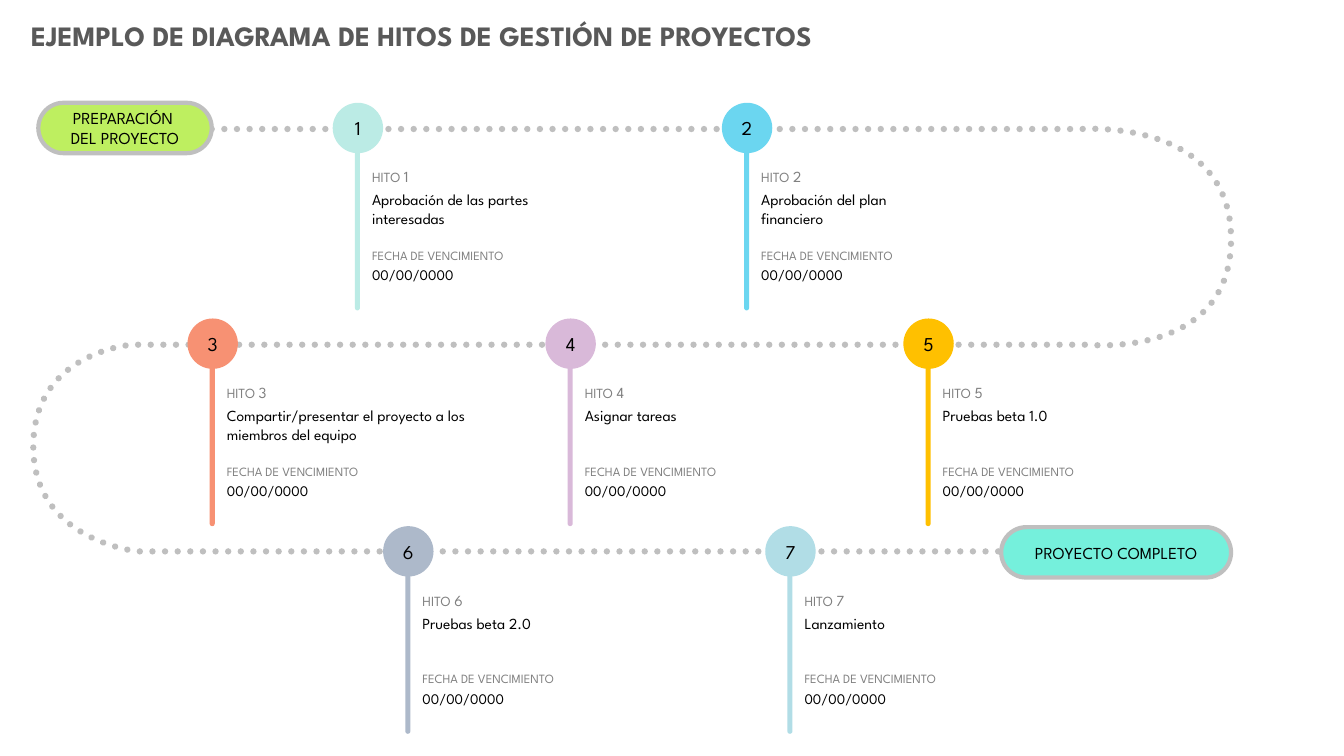
"""Build a one-slide project milestone diagram."""
from dataclasses import dataclass

from lxml import etree
from pptx import Presentation
from pptx import util as u
from pptx.dml.color import RGBColor
from pptx.enum import dml, shapes, text
from pptx.oxml.ns import qn

PX = 9144


@dataclass(frozen=True)
class Theme:
    """Colours and type sizes of the slide."""
    font: str = "League Spartan"
    heading: str = "595959"
    ink: str = "000000"
    muted: str = "808080"
    track: str = "BFBFBF"
    start: str = "BEEF60"
    finish: str = "75F0DC"
    title_size: float = 20
    number_size: float = 14
    pill_size: float = 12
    body_size: float = 11
    date_size: float = 10.5
    label_size: float = 10
    caption_size: float = 9
    track_width: float = 4.5
    border_width: float = 3


THEME = Theme()

MILESTONES = [
    (330, 102, "BBEBE5", "Aprobación de las partes interesadas", 172),
    (716, 102, "6BD6F0", "Aprobación del plan financiero", 137),
    (186, 316, "F79173", "Compartir/presentar el proyecto a los miembros del equipo", 256),
    (541, 316, "D9B9D9", "Asignar tareas", 137),
    (896, 316, "FFC000", "Pruebas beta 1.0", 137),
    (380, 522, "ADB9CA", "Pruebas beta 2.0", 137),
    (759, 522, "B1DDE6", "Lanzamiento", 137),
]

TRACK_BOX = (33, 128, 1188, 419)
TRACK_START = (177, 0)
TRACK_SEGMENTS = [
    [(1040, 0)],
    [(1040, 0), (1188, -11), (1188, 109)],
    [(1188, 229), (1045, 214), (1045, 214)],
    [(98, 214)],
    [(98, 214), (0, 221), (0, 315)],
    [(0, 409), (104, 419), (104, 419)],
    [(995, 419)],
]


def px(*lengths):
    """Turn px lengths into a list of EMU lengths."""
    return [u.Emu(length * PX) for length in lengths]


def add_span(para, words, size, color, bold=False):
    """Add one formatted run to a paragraph."""
    span = para.add_run()
    span.text = words
    span.font.name = THEME.font
    span.font.size = u.Pt(size)
    span.font.bold = bold
    span.font.color.rgb = RGBColor.from_string(color)


def clear_margins(frame):
    """Remove the insets of a text frame and let it wrap."""
    frame.margin_left = frame.margin_top = frame.margin_right = frame.margin_bottom = 0
    frame.word_wrap = True


def add_label(parent, box, spans):
    """Add a text box holding one paragraph of (words, size, color) spans."""
    frame = parent.add_textbox(*px(*box)).text_frame
    clear_margins(frame)
    for span in spans:
        add_span(frame.paragraphs[0], *span)


def add_solid(parent, kind, box, fill):
    """Add a flat filled shape without an outline."""
    solid = parent.add_shape(kind, *px(*box))
    solid.shadow.inherit = False
    solid.fill.solid()
    solid.fill.fore_color.rgb = RGBColor.from_string(fill)
    solid.line.fill.background()
    if kind == shapes.MSO_SHAPE.ROUNDED_RECTANGLE:
        solid.adjustments[0] = 0.5
    return solid


def write_centred(solid, lines, size):
    """Centre lines of text inside a shape."""
    frame = solid.text_frame
    clear_margins(frame)
    frame.vertical_anchor = text.MSO_ANCHOR.MIDDLE
    para = frame.paragraphs[0]
    para.alignment = text.PP_ALIGN.CENTER
    for index, line in enumerate(lines):
        if index:
            para.add_line_break()
        add_span(para, line, size, THEME.ink)


def add_title(page, box, words):
    """Move and format the title placeholder."""
    title = page.shapes.title
    title.left, title.top, title.width, title.height = px(*box)
    frame = title.text_frame
    frame.auto_size = text.MSO_AUTO_SIZE.NONE
    frame.vertical_anchor = text.MSO_ANCHOR.TOP
    para = frame.paragraphs[0]
    para.alignment = text.PP_ALIGN.LEFT
    para.line_spacing = 1.0
    add_span(para, words, THEME.title_size, THEME.heading, bold=True)


def bend_segments(track, segments):
    """Turn the segments that have control points into cubic curves."""
    nodes = list(track._element.iter(qn("a:lnTo")))
    for node, (*controls, _) in zip(nodes, segments):
        if controls:
            node.tag = qn("a:cubicBezTo")
        for index, (x, y) in enumerate(controls):
            node.insert(index, etree.Element(qn("a:pt"), x=str(x), y=str(y)))


def add_track(page, box):
    """Draw the dotted winding track."""
    left, top, width, height = box
    builder = page.shapes.build_freeform(*TRACK_START, scale=PX)
    builder.add_line_segments([segment[-1] for segment in TRACK_SEGMENTS], close=False)
    track = builder.convert_to_shape()
    track.left, track.top, track.width, track.height = px(left, top, width, height)
    bend_segments(track, TRACK_SEGMENTS)
    track.shadow.inherit = False
    track.fill.background()
    track.line.color.rgb = RGBColor.from_string(THEME.track)
    track.line.width = u.Pt(THEME.track_width)
    track.line.dash_style = dml.MSO_LINE.ROUND_DOT
    track.line._get_or_add_ln().set("cap", "rnd")


def add_pill(page, box, fill, lines):
    """Add a bordered end point of the track."""
    pill = add_solid(page.shapes, shapes.MSO_SHAPE.ROUNDED_RECTANGLE, box, fill)
    pill.line.color.rgb = RGBColor.from_string(THEME.track)
    pill.line.width = u.Pt(THEME.border_width)
    write_centred(pill, lines, THEME.pill_size)


def add_milestone(page, number, left, top, color, name, name_width):
    """Add a numbered circle with its stem and texts as one group."""
    parts = page.shapes.add_group_shape().shapes
    add_solid(parts, shapes.MSO_SHAPE.ROUNDED_RECTANGLE, (left + 22, top + 19, 5, 187), color)
    text_left = left + 39
    add_label(parts, (text_left, top + 64, 117, 26), [
        ("HITO", THEME.label_size, THEME.muted),
        (" ", THEME.date_size, THEME.muted),
        (str(number), THEME.body_size, THEME.muted)])
    add_label(parts, (text_left, top + 87, name_width, 57),
              [(name, THEME.body_size, THEME.ink)])
    add_label(parts, (text_left, top + 144, 163, 20),
              [("FECHA DE VENCIMIENTO", THEME.caption_size, THEME.muted)])
    add_label(parts, (text_left, top + 162, 90, 26),
              [("00/00/0000", THEME.date_size, THEME.ink)])
    circle = add_solid(parts, shapes.MSO_SHAPE.OVAL, (left, top, 50, 50), color)
    write_centred(circle, [str(number)], THEME.number_size)


def main():
    """Build and save the deck."""
    deck = Presentation()
    deck.slide_width, deck.slide_height = px(1333, 750)
    page = deck.slides.add_slide(deck.slide_layouts[5])
    add_title(page, (21, 13, 891, 44), "EJEMPLO DE DIAGRAMA DE HITOS DE GESTIÓN DE PROYECTOS")
    add_track(page, TRACK_BOX)
    add_pill(page, (38, 102, 172, 50), THEME.start, ["PREPARACIÓN ", "DEL PROYECTO"])
    for number, milestone in enumerate(MILESTONES, 1):
        add_milestone(page, number, *milestone)
    add_pill(page, (993, 523, 228, 50), THEME.finish, ["PROYECTO COMPLETO"])
    deck.save("out.pptx")


if __name__ == "__main__":
    main()
